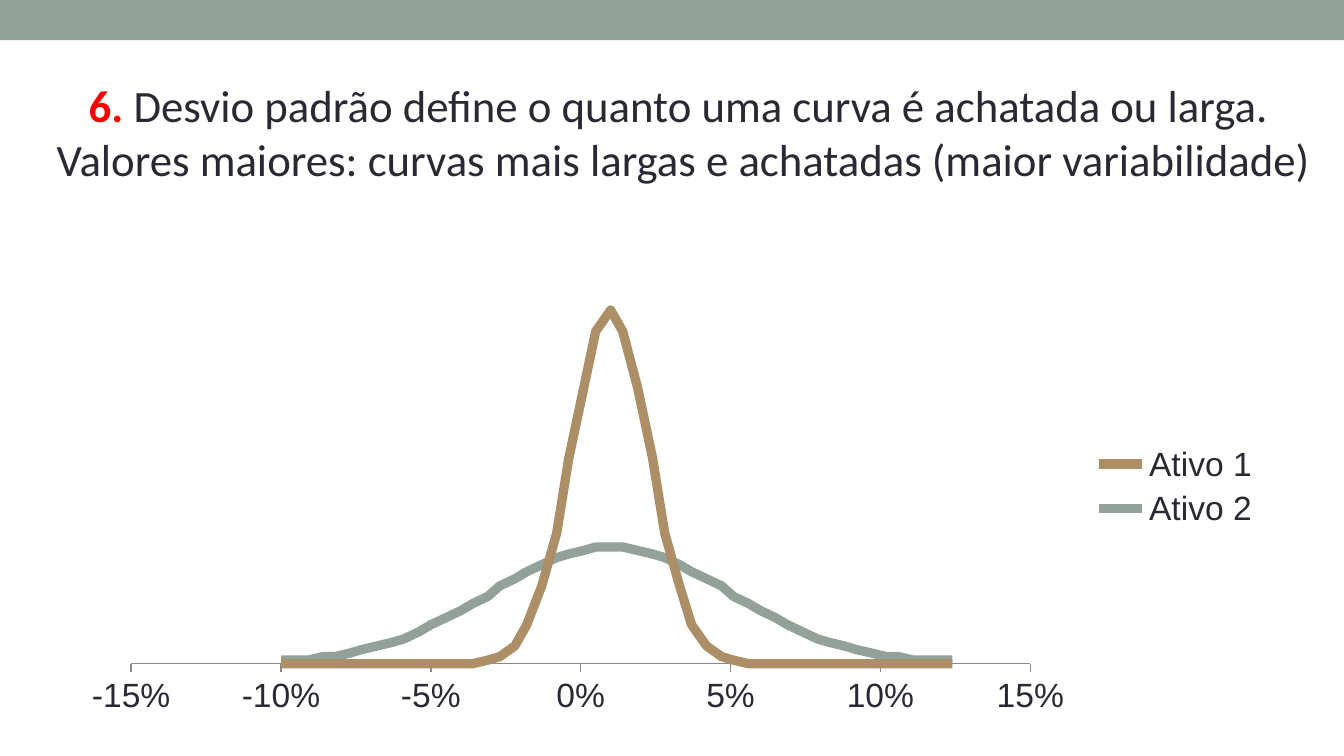
from pptx import Presentation
from pptx.chart.data import XyChartData
from pptx.dml.color import RGBColor
from pptx.enum.chart import XL_CHART_TYPE, XL_LEGEND_POSITION, XL_TICK_MARK
from pptx.enum.shapes import MSO_SHAPE
from pptx.enum.text import MSO_ANCHOR, MSO_AUTO_SIZE, PP_ALIGN
from pptx.oxml import parse_xml
from pptx.oxml.ns import nsdecls
from pptx.util import Cm, Pt

SAGE, TAN, INK, RED, GREY = "93A299", "AD8F67", "292934", "FF0000", "888888"
HEAD = [
    [("6. ", RED, True),
     ("Desvio padrão define o quanto uma curva é achatada ou larga. ", INK, False)],
    [("Valores maiores: curvas mais largas e achatadas (maior variabilidade)", INK, False)],
]
TALL = [0] * 15 + [1, 2, 5, 11, 22, 37, 58, 78, 94, 100]
FLAT = [1, 1, 1, 2, 2, 3, 4, 5, 6, 7, 9, 11, 13, 15, 17, 19, 22, 24,
        26, 28, 30, 31, 32, 33, 33]
CURVES = [("Ativo 1", TALL, TAN), ("Ativo 2", FLAT, SAGE)]


def color(code):
    return RGBColor.from_string(code)


def mirror(rise):
    return rise + rise[-2::-1] + rise[:1]


class Deck:
    head_font, chart_font = "Calibri", "Arial"
    head_size, chart_size = Pt(24), Pt(18)

    def __init__(self):
        self.prs = Presentation()
        self.prs.slide_width, self.prs.slide_height = Cm(25.4), Cm(14.29)
        self.slide = self.prs.slides.add_slide(self.prs.slide_layouts[5])

    def band(self, left, top, width, height, fill):
        box = self.slide.shapes.add_shape(
            MSO_SHAPE.RECTANGLE, Cm(left), Cm(top), Cm(width), Cm(height))
        box.shadow.inherit = False
        box.fill.solid()
        box.fill.fore_color.rgb = color(fill)
        box.line.fill.background()

    def title(self, left, top, width, height, lines):
        box = self.slide.shapes.title
        box.left, box.top, box.width, box.height = map(Cm, (left, top, width, height))
        frame = box.text_frame
        frame.word_wrap = True
        frame.auto_size = MSO_AUTO_SIZE.SHAPE_TO_FIT_TEXT
        frame.vertical_anchor = MSO_ANCHOR.TOP
        frame.text = "\n".join("" for line in lines)
        for para, line in zip(frame.paragraphs, lines):
            para.alignment = PP_ALIGN.CENTER
            for text, ink, bold in line:
                run = para.add_run()
                run.text = text
                run.font.name, run.font.size = self.head_font, self.head_size
                run.font.bold = bold
                run.font.color.rgb = color(ink)

    def chart(self, left, top, width, height, curves):
        data = XyChartData()
        for name, rise, _ in curves:
            row = data.add_series(name)
            for i, y in enumerate(mirror(rise)):
                row.add_data_point(round(-0.1 + 0.00458 * i, 3), y)
        chart = self.slide.shapes.add_chart(
            XL_CHART_TYPE.XY_SCATTER_SMOOTH_NO_MARKERS,
            Cm(left), Cm(top), Cm(width), Cm(height), data).chart
        chart.has_title = False
        chart.font.name, chart.font.size = self.chart_font, self.chart_size
        chart.font.color.rgb = color(INK)
        chart.has_legend = True
        chart.legend.position = XL_LEGEND_POSITION.RIGHT
        chart.legend.include_in_layout = False
        for row, (_, _, ink) in zip(chart.plots[0].series, curves):
            row.smooth = True
            row.format.line.width = Pt(5)
            row.format.line.color.rgb = color(ink)
        self.axes(chart)
        self.frame(chart, x=0.053, y=0.055, w=0.745, h=0.818)

    def axes(self, chart):
        base, side = chart.category_axis, chart.value_axis
        base.minimum_scale, base.maximum_scale, base.major_unit = -0.15, 0.15, 0.05
        base.has_major_gridlines = False
        base.major_tick_mark = XL_TICK_MARK.OUTSIDE
        base.minor_tick_mark = XL_TICK_MARK.NONE
        base.tick_labels.number_format = "0%"
        base.tick_labels.number_format_is_linked = False
        base.format.line.color.rgb = color(GREY)
        side.minimum_scale, side.maximum_scale = 0, 110
        side.has_major_gridlines = False
        side.visible = False

    def frame(self, chart, **part):
        area = chart.plots[0]._element.getparent()
        for old in area.findall("{*}layout"):
            area.remove(old)
        size = "".join(f'<c:{key} val="{val}"/>' for key, val in part.items())
        area.insert(0, parse_xml(
            f'<c:layout {nsdecls("c")}><c:manualLayout><c:layoutTarget val="inner"/>'
            f'<c:xMode val="edge"/><c:yMode val="edge"/>{size}'
            '</c:manualLayout></c:layout>'))


def main():
    deck = Deck()
    deck.band(0, 0, 25.4, 0.76, SAGE)
    deck.title(0.71, 1.35, 24.41, 2.31, HEAD)
    deck.chart(1.27, 4.7, 22.81, 8.99, CURVES)
    deck.prs.save("out.pptx")


if __name__ == "__main__":
    main()
